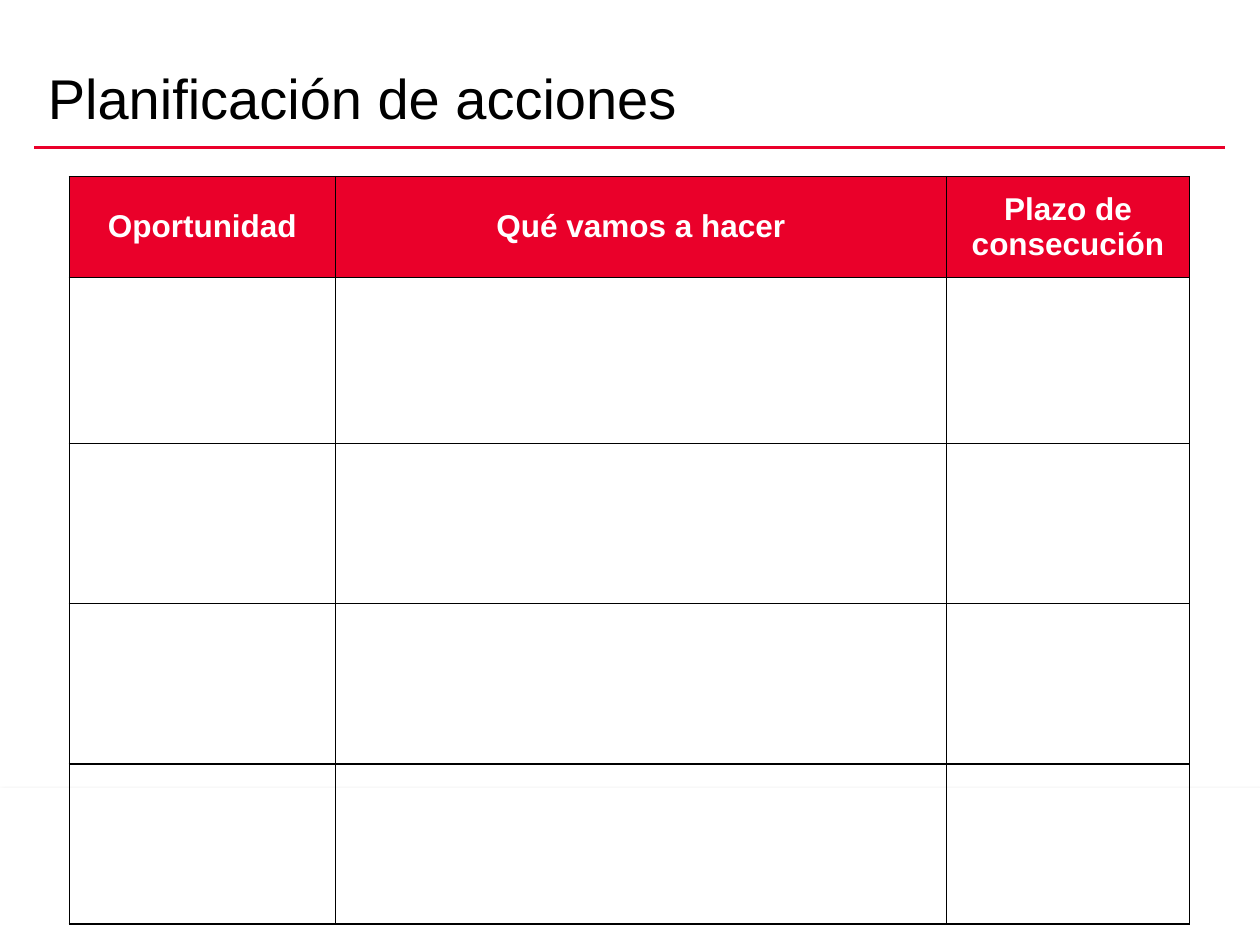
from dataclasses import dataclass

from lxml import etree
from pptx import Presentation
from pptx.dml.color import RGBColor
from pptx.enum.shapes import MSO_CONNECTOR, MSO_SHAPE
from pptx.enum.text import MSO_ANCHOR, PP_ALIGN
from pptx.oxml import parse_xml
from pptx.oxml.ns import nsdecls, qn
from pptx.util import Cm, Pt

STRAIGHT = MSO_CONNECTOR.STRAIGHT
RECTANGLE = MSO_SHAPE.RECTANGLE
MIDDLE = MSO_ANCHOR.MIDDLE
BOTTOM = MSO_ANCHOR.BOTTOM
CENTER = PP_ALIGN.CENTER
LEFT = PP_ALIGN.LEFT


@dataclass(frozen=True)
class Theme:
    red: RGBColor = RGBColor(0xEA, 0x00, 0x2A)
    black: RGBColor = RGBColor(0x00, 0x00, 0x00)
    white: RGBColor = RGBColor(0xFF, 0xFF, 0xFF)
    font: str = "Arial"
    title_size: int = 32
    header_size: int = 18


theme = Theme()


def write(paragraph, text, size, color, bold=False):
    run = paragraph.add_run()
    run.text = text
    run.font.name = theme.font
    run.font.size = Pt(size)
    run.font.bold = bold
    run.font.color.rgb = color


def outline(cell):
    properties = cell._tc.get_or_add_tcPr()
    for position, side in enumerate(("lnL", "lnR", "lnT", "lnB")):
        border = parse_xml(
            f'<a:{side} {nsdecls("a")} w="{Pt(1)}"><a:solidFill>'
            f'<a:srgbClr val="{theme.black}"/></a:solidFill></a:{side}>'
        )
        properties.insert(position, border)


prs = Presentation()
prs.slide_width = Cm(25.4)
prs.slide_height = Cm(19.05)
slide = prs.slides.add_slide(prs.slide_layouts[5])
slide.background.fill.solid()
slide.background.fill.fore_color.rgb = theme.white

footer_band = slide.shapes.add_shape(RECTANGLE, 0, Cm(15.9), prs.slide_width, Cm(3.15))
footer_band.fill.solid()
footer_band.fill.fore_color.rgb = theme.white
footer_band.line.color.rgb = theme.white
footer_band.line.width = Pt(0.75)
footer_band.shadow.inherit = False
band_effects = footer_band._element.spPr.find(qn("a:effectLst"))
band_effects.append(parse_xml(
    f'<a:outerShdw {nsdecls("a")} blurRad="{Pt(3.1)}" dist="{Pt(1.8)}" dir="5400000" '
    f'rotWithShape="0"><a:srgbClr val="{theme.black}"><a:alpha val="35000"/>'
    '</a:srgbClr></a:outerShdw>'
))

title_rule = slide.shapes.add_connector(STRAIGHT, Cm(0.69), Cm(2.97), Cm(24.69), Cm(2.97))
title_rule.line.color.rgb = theme.red
title_rule.line.width = Pt(2)
etree.SubElement(title_rule._element.spPr, qn("a:effectLst"))

title = slide.shapes.title
title.left, title.top, title.width, title.height = Cm(0.71), Cm(0.13), Cm(22.86), Cm(2.62)
title.text_frame.vertical_anchor = BOTTOM
title.text_frame.word_wrap = True
heading = title.text_frame.paragraphs[0]
heading.alignment = LEFT
heading.line_spacing = 0.8
write(heading, "Planificación de acciones", theme.title_size, theme.black)

headers = ["Oportunidad", "Qué vamos a hacer", "Plazo de consecución"]
column_widths = [5.36, 12.32, 4.9]
row_heights = [2.03, 3.35] + [3.23] * 3
plan = slide.shapes.add_table(
    len(row_heights), len(headers), Cm(1.4), Cm(3.56),
    Cm(sum(column_widths)), Cm(sum(row_heights)),
).table
plan.first_row = True
plan.horz_banding = False
for column, width in zip(plan.columns, column_widths):
    column.width = Cm(width)
for row, height in zip(plan.rows, row_heights):
    row.height = Cm(height)
for cell in plan.iter_cells():
    cell.fill.background()
    outline(cell)
for cell, header in zip(plan.rows[0].cells, headers):
    cell.fill.solid()
    cell.fill.fore_color.rgb = theme.red
    cell.vertical_anchor = MIDDLE
    label = cell.text_frame.paragraphs[0]
    label.alignment = CENTER
    write(label, header, theme.header_size, theme.white, bold=True)

prs.save("out.pptx")
